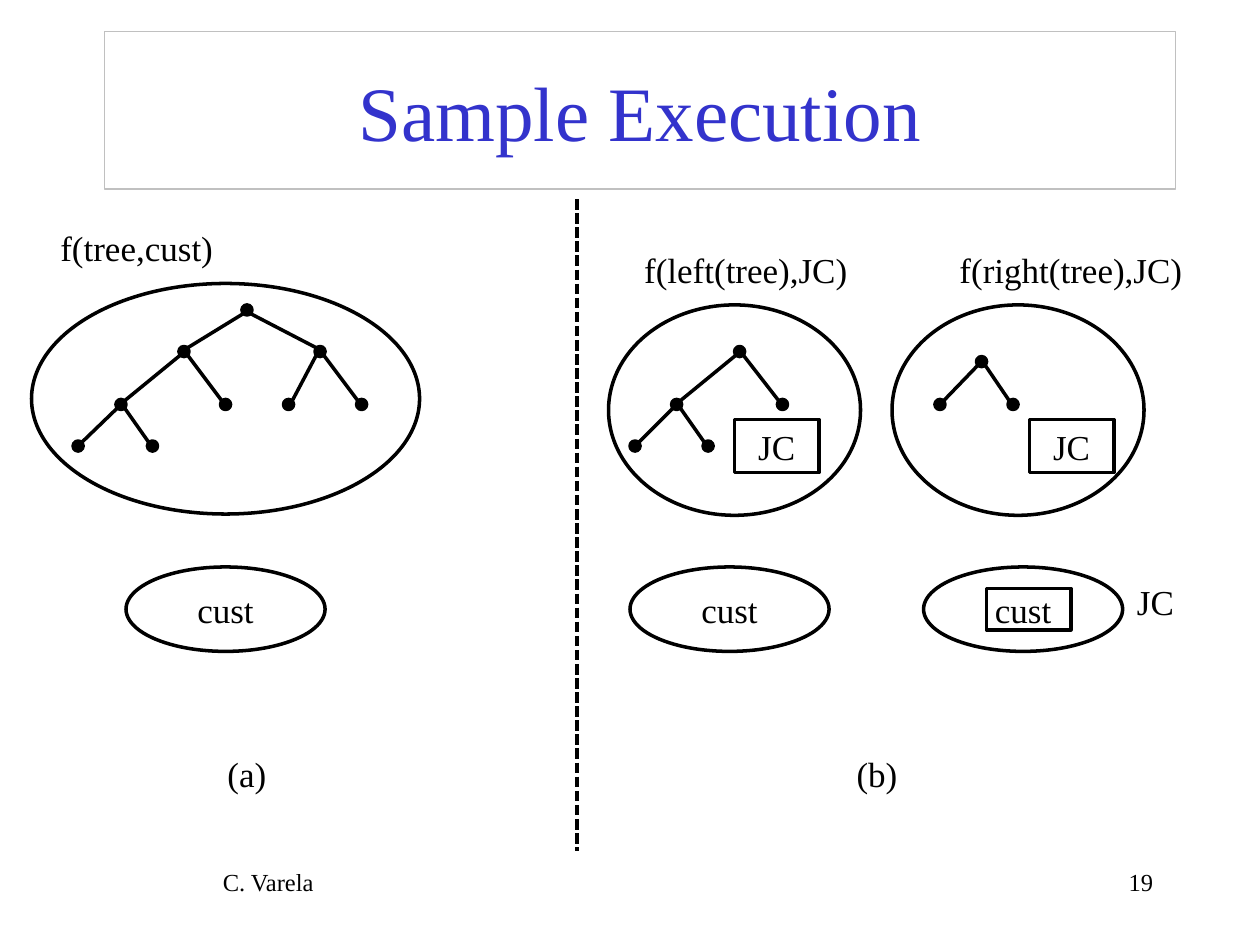
from typing import NamedTuple

from lxml import etree
from pptx import Presentation
from pptx import util as u
from pptx.dml.color import RGBColor
from pptx.enum import dml, shapes, text
from pptx.oxml import ns

FONT = "Times New Roman"
BLACK = "000000"
NODE_SIZE = 0.08
EDGE_INSET = 0.03
OVAL = shapes.MSO_SHAPE.OVAL
RECTANGLE = shapes.MSO_SHAPE.RECTANGLE


class Box(NamedTuple):
    left: float
    top: float
    width: float
    height: float


class Node(NamedTuple):
    left: float
    top: float
    children: tuple = ()


class Outline(NamedTuple):
    kind: int
    box: Box
    words: str = ""


class Label(NamedTuple):
    words: str
    box: Box
    size: int = 20
    align: int = text.PP_ALIGN.CENTER


def color(value: str) -> RGBColor:
    return RGBColor.from_string(value)


def write(shape, words: str, *, size: int = 20, fill: str = BLACK,
          align: int = text.PP_ALIGN.CENTER, anchor: int = text.MSO_ANCHOR.MIDDLE) -> None:
    frame = shape.text_frame
    frame.word_wrap = True
    frame.vertical_anchor = anchor
    paragraph = frame.paragraphs[0]
    paragraph.alignment = align
    run = paragraph.add_run()
    run.text = words
    run.font.name = FONT
    run.font.size = u.Pt(size)
    run.font.color.rgb = color(fill)


def place(shape, box: Box) -> None:
    shape.left, shape.top, shape.width, shape.height = map(u.Inches, box)


def draw_outline(slide, outline: Outline, filled: bool = False) -> None:
    shape = slide.shapes.add_shape(outline.kind, *map(u.Inches, outline.box))
    shape.shadow.inherit = False
    shape.line.color.rgb = color(BLACK)
    shape.line.width = u.Pt(2)
    if filled:
        shape.fill.solid()
        shape.fill.fore_color.rgb = color(BLACK)
    else:
        shape.fill.background()
    if outline.words:
        write(shape, outline.words)


def draw_line(slide, x1: float, y1: float, x2: float, y2: float):
    line = slide.shapes.add_connector(
        shapes.MSO_CONNECTOR.STRAIGHT, *map(u.Inches, (x1, y1, x2, y2)))
    line.line.color.rgb = color(BLACK)
    line.line.width = u.Pt(2)
    etree.SubElement(line._element.spPr, ns.qn("a:effectLst"))
    return line


def draw_tree(slide, node: Node) -> None:
    draw_outline(slide, Outline(OVAL, Box(node.left, node.top, NODE_SIZE, NODE_SIZE)), filled=True)
    middle = NODE_SIZE / 2
    for child in node.children:
        shift = EDGE_INSET if child.left > node.left else -EDGE_INSET
        draw_line(slide, node.left + middle + shift, node.top + middle + EDGE_INSET,
                  child.left + middle - shift, child.top + middle - EDGE_INSET)
        draw_tree(slide, child)


def draw_label(slide, label: Label) -> None:
    shape = slide.shapes.add_textbox(*map(u.Inches, label.box))
    write(shape, label.words, size=label.size, align=label.align, anchor=text.MSO_ANCHOR.TOP)


TREES = (
    Node(1.92, 2.42, (
        Node(1.42, 2.75, (
            Node(0.92, 3.17, (Node(0.58, 3.5), Node(1.17, 3.5))),
            Node(1.75, 3.17))),
        Node(2.5, 2.75, (Node(2.25, 3.17), Node(2.83, 3.17))))),
    Node(5.83, 2.75, (
        Node(5.33, 3.17, (Node(5, 3.5), Node(5.58, 3.5))),
        Node(6.17, 3.17))),
    Node(7.75, 2.83, (Node(7.42, 3.17), Node(8, 3.17))),
)
OUTLINES = (
    Outline(OVAL, Box(0.25, 2.25, 3.08, 1.83)),
    *(Outline(OVAL, Box(left, 2.42, 2, 1.67)) for left in (4.83, 7.08)),
    *(Outline(RECTANGLE, Box(left, 3.33, 0.67, 0.42), "JC") for left in (5.83, 8.17)),
    *(Outline(OVAL, Box(left, 4.5, 1.58, 0.67), "cust") for left in (1, 5, 7.33)),
    Outline(RECTANGLE, Box(7.83, 4.67, 0.67, 0.33)),
)
LABELS = (
    Label("f(tree,cust)", Box(0.25, 1.75, 1.67, 0.44)),
    Label("f(left(tree),JC)", Box(4.92, 1.92, 2, 0.44)),
    Label("f(right(tree),JC)", Box(7.5, 1.92, 2, 0.44)),
    Label("JC", Box(8.92, 4.56, 0.5, 0.44)),
    Label("(a)", Box(1.67, 5.92, 0.58, 0.44)),
    Label("(b)", Box(6.67, 5.92, 0.58, 0.44)),
    Label("C. Varela", Box(1.67, 6.83, 6.67, 0.5), 14, text.PP_ALIGN.LEFT),
    Label("19", Box(7.17, 6.83, 2.08, 0.5), 14, text.PP_ALIGN.RIGHT),
)


def main() -> None:
    presentation = Presentation()
    presentation.slide_width = u.Inches(10)
    presentation.slide_height = u.Inches(7.5)
    slide = presentation.slides.add_slide(presentation.slide_layouts[5])

    title = slide.shapes.title
    place(title, Box(0.83, 0.25, 8.5, 1.25))
    title.line.color.rgb = color("C0C0C0")
    title.line.width = u.Pt(0.75)
    write(title, "Sample Execution", size=44, fill="3333CC")

    for tree in TREES:
        draw_tree(slide, tree)
    for outline in OUTLINES:
        draw_outline(slide, outline)
    divider = draw_line(slide, 4.58, 1.58, 4.58, 6.75)
    divider.line.dash_style = dml.MSO_LINE.SQUARE_DOT
    for label in LABELS:
        draw_label(slide, label)

    presentation.save("out.pptx")


if __name__ == "__main__":
    main()
